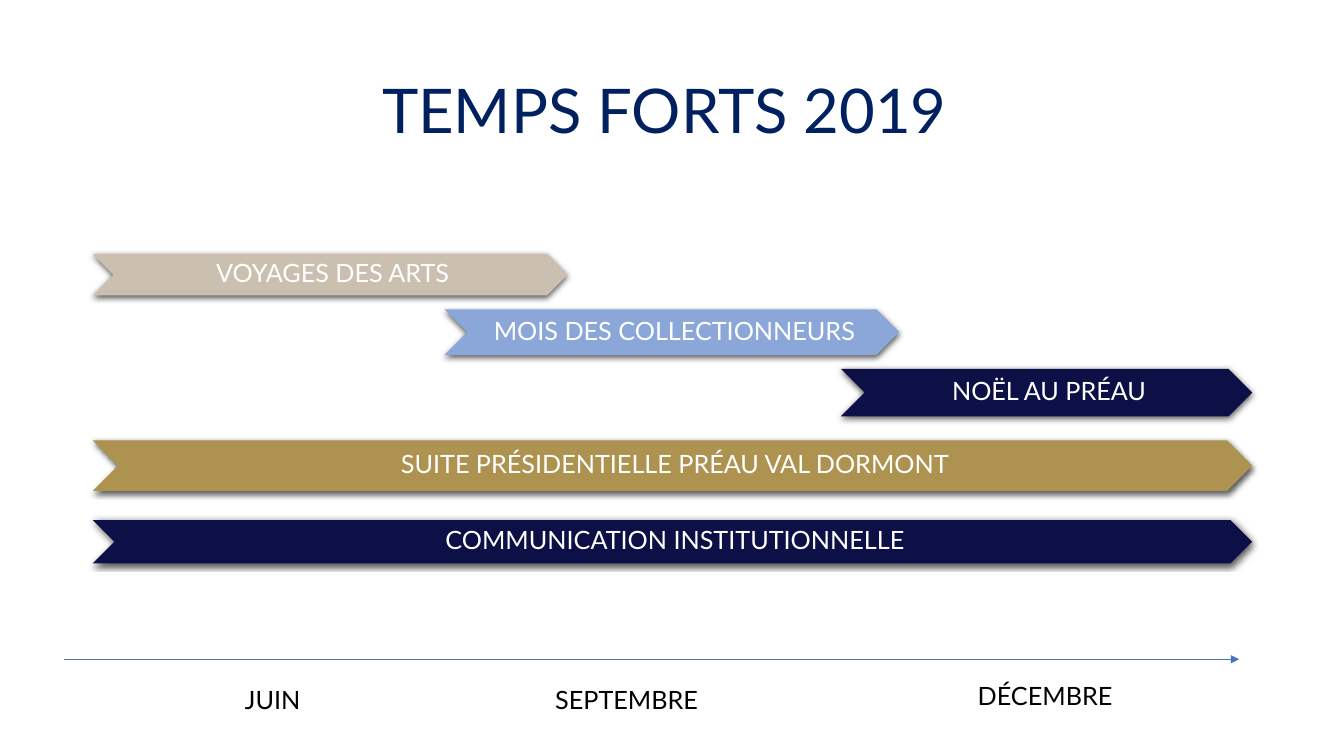
from dataclasses import dataclass

from lxml import etree
from pptx import Presentation
from pptx import util as u
from pptx.dml.color import RGBColor
from pptx.enum import shapes, text
from pptx.oxml import ns


@dataclass(frozen=True)
class Theme:
    font: str = "Lato"
    title_size: int = 44
    label_size: int = 18
    title: str = "002060"
    light: str = "FFFFFF"
    dark: str = "000000"
    sand: str = "CBC0B0"
    sky: str = "8BA7D9"
    navy: str = "0D1046"
    gold: str = "AE9350"
    axis: str = "4472C4"


@dataclass(frozen=True)
class Box:
    left: float
    top: float
    width: float
    height: float

    def cell(self, column, row, columns, rows):
        return Box(self.left + column * GRID, self.top + row * GRID,
                   columns * GRID, rows * GRID)

    def lengths(self):
        return [u.Inches(side) for side in (self.left, self.top, self.width, self.height)]


THEME = Theme()
GRID = 0.1
SLIDE = Box(0, 0, 13.33, 7.5)
TITLE = Box(0.92, 0.4, 11.5, 1.45)
CAMPAIGNS = Box(0.92, 2.52, 11.5, 3.07)
TIMELINE = Box(0.63, 6.54, 11.66, 0.6)

CAMPAIGN_BARS = [
    ("VOYAGES DES ARTS", THEME.sand, (0, 0, 47.1, 4.1)),
    ("MOIS DES COLLECTIONNEURS", THEME.sky, (34.9, 5.5, 45.1, 4.5)),
    ("NOËL AU PRÉAU", THEME.navy, (74.2, 11.4, 40.8, 4.7)),
    ("SUITE PRÉSIDENTIELLE PRÉAU VAL DORMONT", THEME.gold, (0, 18.5, 115, 5)),
    ("COMMUNICATION INSTITUTIONNELLE", THEME.navy, (0, 26.4, 115, 4.3)),
]
MONTHS = [
    ("JUIN", (0, 2, 41.5, 4)),
    ("SEPTEMBRE", (35.1, 2, 41.5, 4)),
    ("DÉCEMBRE", (76.6, 1.6, 41.5, 4)),
]


def write(shape, words, size, color, line_spacing=1.0):
    frame = shape.text_frame
    frame.word_wrap = True
    paragraph = frame.paragraphs[0]
    paragraph.alignment = text.PP_ALIGN.CENTER
    paragraph.line_spacing = line_spacing
    run = paragraph.add_run()
    run.text = words
    run.font.name = THEME.font
    run.font.size = u.Pt(size)
    run.font.color.rgb = RGBColor.from_string(color)
    return frame


def add_soft_shadow(shape):
    shape.shadow.inherit = False
    effects = shape._element.spPr.find(ns.qn("a:effectLst"))
    shadow = etree.SubElement(
        effects, ns.qn("a:outerShdw"), blurRad=str(u.Pt(4.5)), dist=str(u.Pt(1.5)),
        dir="5400000", algn="ctr", rotWithShape="0")
    color = etree.SubElement(shadow, ns.qn("a:srgbClr"), val=THEME.dark)
    etree.SubElement(color, ns.qn("a:alpha"), val="63000")


def build_title(slide, box):
    title = slide.shapes.title
    title.left, title.top, title.width, title.height = box.lengths()
    frame = write(title, "TEMPS FORTS 2019 ", THEME.title_size, THEME.title, 0.9)
    frame.auto_size = text.MSO_AUTO_SIZE.NONE
    frame.vertical_anchor = text.MSO_ANCHOR.MIDDLE


def build_campaigns(slide, box):
    for name, color, span in CAMPAIGN_BARS:
        bar = slide.shapes.add_shape(shapes.MSO_SHAPE.CHEVRON, *box.cell(*span).lengths())
        bar.fill.solid()
        bar.fill.fore_color.rgb = RGBColor.from_string(color)
        bar.line.fill.background()
        add_soft_shadow(bar)
        frame = write(bar, name, THEME.label_size, THEME.light, 0.9)
        frame.vertical_anchor = text.MSO_ANCHOR.MIDDLE
        frame.margin_left = u.Inches(0.08)
        frame.margin_right = frame.margin_top = frame.margin_bottom = u.Inches(0.03)


def build_timeline(slide, box):
    left, top, width, _ = box.lengths()
    axis = slide.shapes.add_connector(
        shapes.MSO_CONNECTOR.STRAIGHT, left, top, left + width, top)
    axis.line.color.rgb = RGBColor.from_string(THEME.axis)
    axis.line.width = u.Pt(0.5)
    etree.SubElement(axis.line._get_or_add_ln(), ns.qn("a:tailEnd"), type="triangle")
    etree.SubElement(axis._element.spPr, ns.qn("a:effectLst"))
    for month, span in MONTHS:
        label = slide.shapes.add_textbox(*box.cell(*span).lengths())
        frame = write(label, month, THEME.label_size, THEME.dark)
        frame.auto_size = text.MSO_AUTO_SIZE.SHAPE_TO_FIT_TEXT


def main():
    presentation = Presentation()
    presentation.slide_width = u.Inches(SLIDE.width)
    presentation.slide_height = u.Inches(SLIDE.height)
    slide = presentation.slides.add_slide(presentation.slide_layouts.get_by_name("Title Only"))
    build_title(slide, TITLE)
    build_campaigns(slide, CAMPAIGNS)
    build_timeline(slide, TIMELINE)
    presentation.save("out.pptx")


if __name__ == "__main__":
    main()
